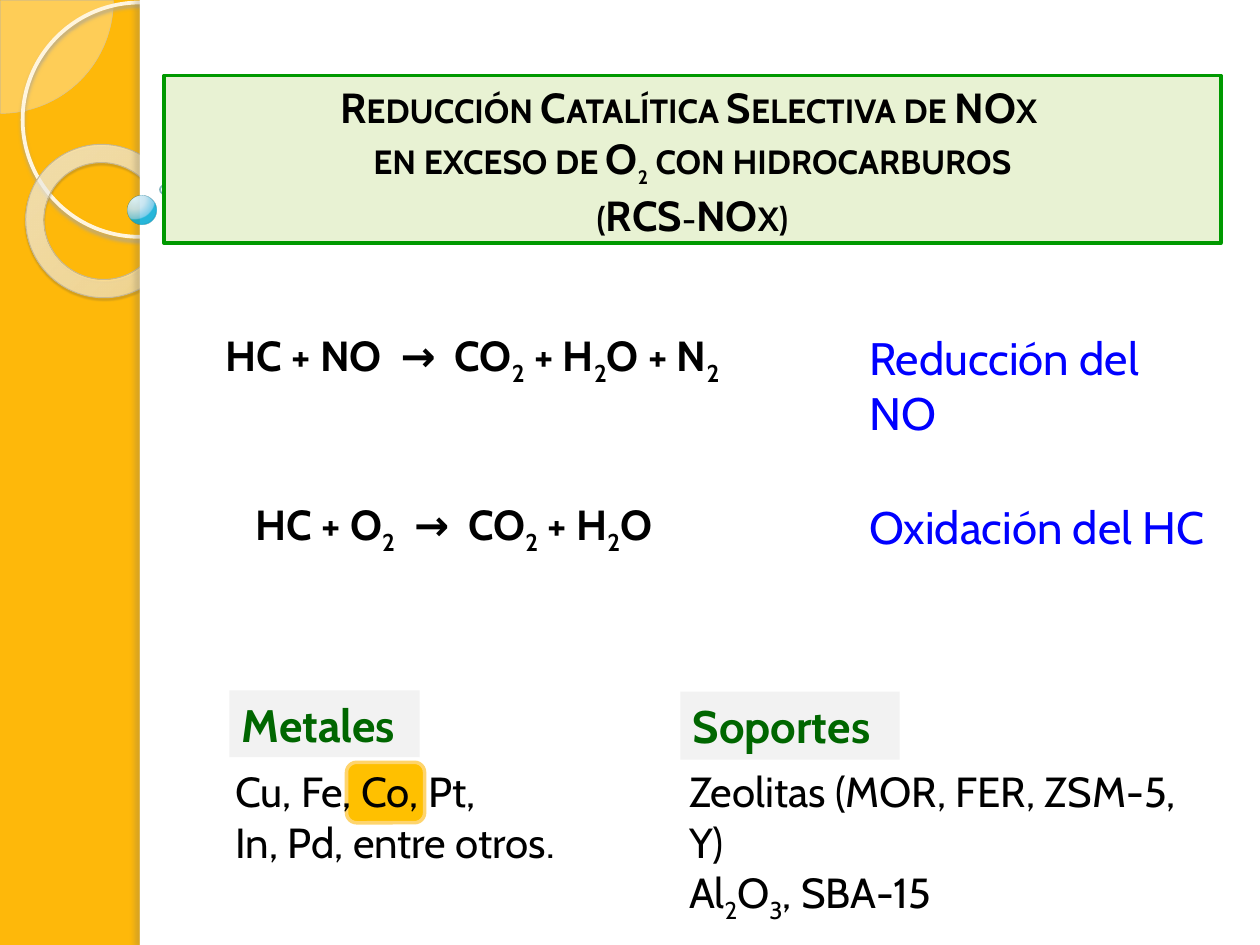
from lxml.etree import SubElement
from pptx import Presentation
from pptx.dml.color import RGBColor
from pptx.enum.shapes import MSO_SHAPE
from pptx.enum.text import MSO_ANCHOR, PP_ALIGN
from pptx.oxml import parse_xml
from pptx.oxml.ns import nsdecls, qn
from pptx.util import Inches, Pt

AMBER = RGBColor(0xFE, 0xB8, 0x0A)
CREAM = RGBColor(0xFE, 0xFA, 0xF4)
SAND = RGBColor(0xD3, 0xC3, 0x9F)
IVORY = RGBColor(0xFF, 0xF5, 0xDE)
KHAKI = RGBColor(0xC7, 0xB8, 0x93)
TEAL = RGBColor(0x30, 0x8E, 0xA5)
DARK_TEAL = RGBColor(0x31, 0x80, 0x93)
WHITE = RGBColor(0xFF, 0xFF, 0xFF)
BLACK = RGBColor(0, 0, 0)
GOLD = RGBColor(0xFF, 0xC0, 0x00)
PALE_GOLD = RGBColor(0xFE, 0xD4, 0x6C)
GRAY = RGBColor(0xF2, 0xF2, 0xF2)
DARK_GREEN = RGBColor(0, 0x66, 0)
GREEN = RGBColor(0, 0x99, 0)
PALE_GREEN = RGBColor(0xE8, 0xF2, 0xD3)
BLUE = RGBColor(0, 0, 0xFF)
SHADE_RING = RGBColor(0xB0, 0xA6, 0x8F)
SHADE_DONUT = RGBColor(0x5A, 0x54, 0x44)
SHADE_EDGE = RGBColor(0x73, 0x6F, 0x63)


class SlideBuilder:
    font = "Cabin"

    def __init__(self, slide):
        self.s = slide

    def shape(self, kind, box, fill=None, line=None, width=1, adj=()):
        sp = self.s.shapes.add_shape(kind, *map(Inches, box))
        sp.shadow.inherit = False
        for i, value in enumerate(adj):
            sp.adjustments[i] = value
        if fill is None:
            sp.fill.background()
        else:
            sp.fill.solid()
            sp.fill.fore_color.rgb = fill
        if line is None:
            sp.line.fill.background()
        else:
            sp.line.color.rgb = line
            sp.line.width = Pt(width)
        return sp

    def alpha(self, parent, percent):
        color = parent.find(f"{qn('a:solidFill')}/{qn('a:srgbClr')}")
        SubElement(color, qn("a:alpha")).set("val", str(percent * 1000))

    def shadow(self, sp, color, opacity, blur, dist, angle):
        effects = sp._element.spPr.find(qn("a:effectLst"))
        effects.append(parse_xml(
            f'<a:outerShdw {nsdecls("a")} blurRad="{Pt(blur)}" dist="{Pt(dist)}" '
            f'dir="{angle * 60000}" algn="tl" rotWithShape="0"><a:srgbClr val="{color}">'
            f'<a:alpha val="{opacity * 1000}"/></a:srgbClr></a:outerShdw>'))

    def radial(self, sp, stops, focus):
        gs = "".join(
            f'<a:gs pos="{pos * 1000}"><a:srgbClr val="{color}">'
            f'<a:alpha val="{opacity * 1000}"/></a:srgbClr></a:gs>'
            for pos, color, opacity in stops)
        rect = " ".join(f'{side}="{v * 1000}"' for side, v in zip("ltrb", focus))
        spPr = sp._element.spPr
        spPr.replace(spPr.find(qn("a:noFill")), parse_xml(
            f'<a:gradFill {nsdecls("a")} rotWithShape="1"><a:gsLst>{gs}</a:gsLst>'
            f'<a:path path="circle"><a:fillToRect {rect}/></a:path></a:gradFill>'))

    def add_run(self, p, text, size, color, bold, sub, small):
        r = p.add_run()
        r.text = text
        r.font.name = self.font
        r.font.size = Pt(size)
        r.font.bold = bold
        r.font.color.rgb = color
        rPr = r._r.get_or_add_rPr()
        if sub:
            rPr.set("baseline", "-25000")
        if small:
            rPr.set("cap", "small")

    def put_text(self, sp, lines, size, color, bold=False, align=PP_ALIGN.LEFT, small=False):
        tf = sp.text_frame
        tf.word_wrap = True
        tf.vertical_anchor = MSO_ANCHOR.TOP
        for i, line in enumerate(lines):
            p = tf.add_paragraph() if i else tf.paragraphs[0]
            p.alignment = align
            first, *rest = line.split("_")
            parts = [(first, False)]
            for part in rest:
                parts += [(part[:1], True), (part[1:], False)]
            for text, sub in parts:
                if text:
                    self.add_run(p, text, size, color, bold, sub, small)

    def text(self, box, lines, size, color, bold=False):
        self.put_text(self.s.shapes.add_textbox(*map(Inches, box)), lines, size, color, bold)

    def label(self, box, title):
        sp = self.shape(MSO_SHAPE.RECTANGLE, box, GRAY)
        self.put_text(sp, [title], 26, DARK_GREEN, True)

    def reaction(self, left, top, width, equation, name, name_width):
        self.text((left, top, width, 0.5), [equation], 24, BLACK, True)
        self.text((6.8, top, name_width, 0.53), [name], 26, BLUE)

    def side_band(self):
        self.s.background.fill.solid()
        self.s.background.fill.fore_color.rgb = AMBER
        pie = self.shape(MSO_SHAPE.PIE, (-0.89, -0.89, 1.79, 1.79), CREAM, SAND, 0.25, (0, 54.02))
        self.alpha(pie._element.spPr, 33)
        ring = self.shape(MSO_SHAPE.OVAL, (0.18, 0.02, 1.86, 1.86), None, IVORY, 2.15)
        self.shadow(ring, SHADE_RING, 85, 2, 2, 90)
        donut = self.shape(MSO_SHAPE.DONUT, (0.2, 1.15, 1.23, 1.21), None, KHAKI, 0.58, (0.12,))
        donut.rotation = 38.6
        self.radial(donut, [(0, "FFFCF6", 70), (70, "FFFEFB", 55), (100, "F0D28E", 60)],
                    (-408, -50, 508, 150))
        self.shadow(donut, SHADE_DONUT, 35, 1, 1.2, 75)
        self.shape(MSO_SHAPE.RECTANGLE, (1.11, 0, 8.89, 7.5), WHITE)
        edge = self.shape(MSO_SHAPE.RECTANGLE, (1.11, 0, 0.08, 7.5), WHITE)
        self.shadow(edge, SHADE_EDGE, 25, 3, 3, 180)
        bead = self.shape(MSO_SHAPE.OVAL, (1.01, 1.55, 0.23, 0.23), None, TEAL, 0.16)
        self.radial(bead, [(0, "DAF4FF", 95), (50, "C3E3F0", 90), (95, "6BC7E8", 88),
                           (100, "00ABD5", 85)], (25, 12, 75, 88))
        dot = self.shape(MSO_SHAPE.OVAL, (1.27, 1.47, 0.07, 0.07), None, DARK_TEAL, 1)
        for sp in (bead, dot):
            self.alpha(sp._element.spPr.find(qn("a:ln")), 60)


def main():
    prs = Presentation()
    prs.slide_width, prs.slide_height = Inches(10), Inches(7.5)
    b = SlideBuilder(prs.slides.add_slide(prs.slide_layouts[6]))
    b.side_band()

    b.shape(MSO_SHAPE.ROUNDED_RECTANGLE, (2.75, 6.05, 0.62, 0.48), GOLD, PALE_GOLD, 2)
    b.text((1.77, 6.03, 2.76, 0.9), ["Cu, Fe, Co, Pt,", "In, Pd, entre otros."], 24, BLACK)
    b.label((1.82, 5.48, 1.51, 0.53), "Metales")

    b.reaction(1.93, 3.91, 3.97, "HC + O_2  →  CO_2 + H_2O", "Oxidación del HC", 2.87)
    b.reaction(1.69, 2.57, 4.91, "HC + NO  →  CO_2 + H_2O + N_2", "Reducción del NO", 2.95)

    title = b.shape(MSO_SHAPE.RECTANGLE, (1.3, 0.6, 8.39, 1.33), PALE_GREEN, GREEN, 2)
    b.put_text(title, ["Reducción Catalítica Selectiva de NOx ",
                       "en exceso de O_2 con hidrocarburos", "(RCS-NOx)"],
               24, BLACK, True, PP_ALIGN.CENTER, small=True)

    b.label((5.4, 5.49, 1.74, 0.54), "Soportes")
    b.text((5.37, 6.03, 4.35, 0.91),
           ["Zeolitas (MOR, FER, ZSM-5, Y)", "Al_2O_3, SBA-15"], 24, BLACK)
    prs.save("out.pptx")


if __name__ == "__main__":
    main()
